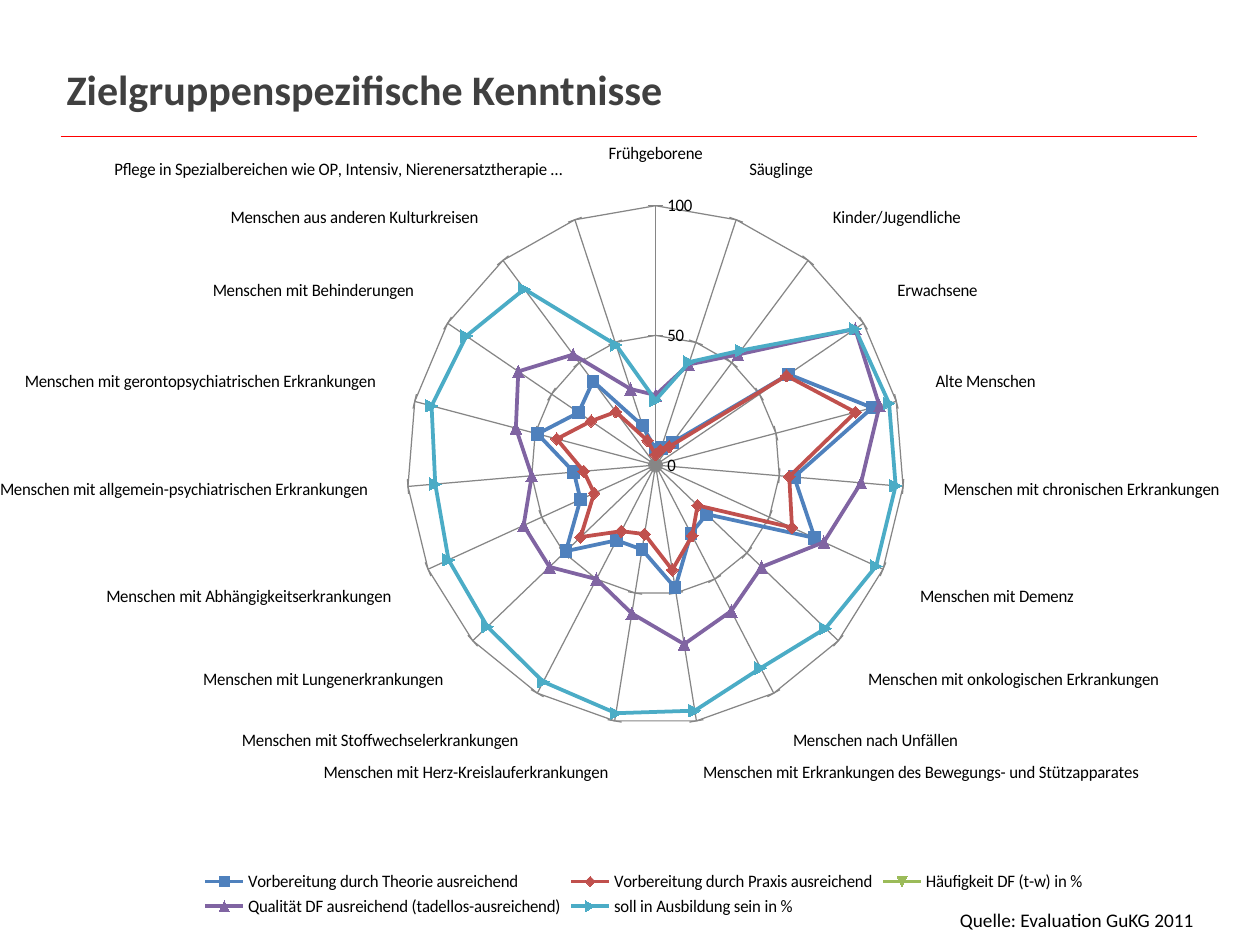
"""Builds a slide with a radar chart of knowledge by target group."""
from pptx import Presentation
from pptx import util as u
from pptx.chart.data import CategoryChartData
from pptx.dml.color import RGBColor
from pptx.enum import chart as ch, shapes, text
from pptx.oxml import parse_xml
from pptx.oxml.ns import nsdecls

TITLE = "Zielgruppenspezifische Kenntnisse"
SOURCE = "Quelle: Evaluation GuKG 2011"
FONT = "Calibri"
HUES = {
    "title": "404040", "text": "000000", "rule": "FF0000", "grid": "868686",
    "theory": "4F81BD", "practice": "C0504D", "count": "9BBB59",
    "grade": "8064A2", "goal": "4BACC6",
}
GROUPS = [
    "Frühgeborene",
    "Säuglinge",
    "Kinder/Jugendliche",
    "Erwachsene",
    "Alte Menschen",
    "Menschen mit chronischen Erkrankungen",
    "Menschen mit Demenz",
    "Menschen mit onkologischen Erkrankungen",
    "Menschen nach Unfällen",
    "Menschen mit Erkrankungen des Bewegungs- und Stützapparates",
    "Menschen mit Herz-Kreislauferkrankungen",
    "Menschen mit Stoffwechselerkrankungen",
    "Menschen mit Lungenerkrankungen",
    "Menschen mit Abhängigkeitserkrankungen",
    "Menschen mit allgemein-psychiatrischen Erkrankungen",
    "Menschen mit gerontopsychiatrischen Erkrankungen",
    "Menschen mit Behinderungen",
    "Menschen aus anderen Kulturkreisen",
    "Pflege in Spezialbereichen wie OP, Intensiv, Nierenersatztherapie …",
]
SERIES = [
    ("Vorbereitung durch Theorie ausreichend", "theory",
     [6, 7, 11, 64, 90, 56, 70, 28, 30, 48, 33, 33, 49, 33, 33, 49, 37, 41, 16]),
    ("Vorbereitung durch Praxis ausreichend", "practice",
     [4, 6, 9, 63, 83, 54, 60, 23, 31, 41, 27, 29, 41, 27, 29, 41, 31, 26, 10]),
    ("Häufigkeit DF (t-w) in %", "count", [None] * len(GROUPS)),
    ("Qualität DF ausreichend (tadellos-ausreichend)", "grade",
     [27, 41, 54, 96, 93, 83, 74, 58, 64, 70, 58, 50, 58, 58, 50, 58, 66, 54, 31]),
    ("soll in Ausbildung sein in %", "goal",
     [25, 42, 56, 96, 97, 97, 97, 93, 89, 96, 97, 95, 92, 91, 89, 93, 91, 86, 49]),
]
PLOT = {"x": 0.3, "y": 0.16, "w": 0.42, "h": 0.69}


def hue(name):
    return RGBColor.from_string(HUES[name])


def place(box):
    return [u.Cm(n) for n in box]


def style(font, size, name, bold=False):
    font.name, font.size, font.bold = FONT, u.Pt(size), bold
    font.color.rgb = hue(name)


def stroke(line, name, width):
    line.color.rgb = hue(name)
    line.width = u.Pt(width)


def add_rule(slide):
    ends = place((1.22, 2.74, 24.13, 2.74))
    rule = slide.shapes.add_connector(shapes.MSO_CONNECTOR.STRAIGHT, *ends)
    stroke(rule.line, "rule", 0.25)
    rule._element.spPr.append(parse_xml(f"<a:effectLst {nsdecls('a')}/>"))


def set_plot(chart):
    area = chart._chartSpace.chart.plotArea
    for old in area.xpath("c:layout"):
        area.remove(old)
    sizes = "".join(f'<c:{key} val="{val}"/>' for key, val in PLOT.items())
    area.insert(0, parse_xml(
        f'<c:layout {nsdecls("c")}><c:manualLayout><c:layoutTarget val="inner"/>'
        f'<c:xMode val="edge"/><c:yMode val="edge"/>{sizes}'
        "</c:manualLayout></c:layout>"))
    chart._chartSpace.chart.addnext(parse_xml(
        f'<c:spPr {nsdecls("c", "a")}><a:noFill/><a:ln><a:noFill/></a:ln></c:spPr>'))


def add_radar(slide):
    data = CategoryChartData(number_format="General")
    data.categories = GROUPS
    for name, _, vals in SERIES:
        data.add_series(name, vals)
    frame = slide.shapes.add_chart(
        ch.XL_CHART_TYPE.RADAR_MARKERS, *place((0, 0, 24.9, 18.57)), data)
    chart = frame.chart
    chart.has_title = False
    style(chart.font, 10, "text")
    chart.has_legend = True
    chart.legend.position = ch.XL_LEGEND_POSITION.BOTTOM
    chart.legend.include_in_layout = False
    set_plot(chart)

    ticks = ch.XL_TICK_MARK
    marks = (chart.category_axis, ticks.OUTSIDE), (chart.value_axis, ticks.CROSS)
    for axis, mark in marks:
        axis.major_tick_mark, axis.minor_tick_mark = mark, ticks.NONE
        axis.has_major_gridlines = True
        stroke(axis.major_gridlines.format.line, "grid", 0.75)
        stroke(axis.format.line, "grid", 0.75)
    scale = chart.value_axis
    scale.minimum_scale, scale.maximum_scale, scale.major_unit = 0, 100, 50
    scale.tick_labels.number_format = "General"
    scale.tick_labels.number_format_is_linked = False

    plot = chart.plots[0]
    plot.vary_by_categories = False
    for row, (_, name, _) in zip(plot.series, SERIES):
        stroke(row.format.line, name, 2.25)
        row.marker.size = 7
        row.marker.format.fill.solid()
        row.marker.format.fill.fore_color.rgb = hue(name)
        stroke(row.marker.format.line, name, 0.75)


def add_source(slide):
    box = slide.shapes.add_textbox(*place((19.1, 18.18, 6.3, 0.73)))
    box.text_frame.word_wrap = True
    box.text_frame.text = SOURCE
    style(box.text_frame.paragraphs[0].runs[0].font, 11, "text")


def set_title(slide):
    title = slide.shapes.title
    title.left, title.top, title.width, title.height = place((1.09, 0.91, 22.86, 1.75))
    frame = title.text_frame
    frame.text = TITLE
    frame.vertical_anchor = text.MSO_ANCHOR.MIDDLE
    para = frame.paragraphs[0]
    para.alignment = text.PP_ALIGN.LEFT
    style(para.runs[0].font, 24, "title", True)


def main():
    deck = Presentation()
    deck.slide_width, deck.slide_height = place((25.4, 19.05))
    slide = deck.slides.add_slide(deck.slide_layouts[5])
    add_rule(slide)
    add_radar(slide)
    add_source(slide)
    set_title(slide)
    deck.save("out.pptx")


if __name__ == "__main__":
    main()
